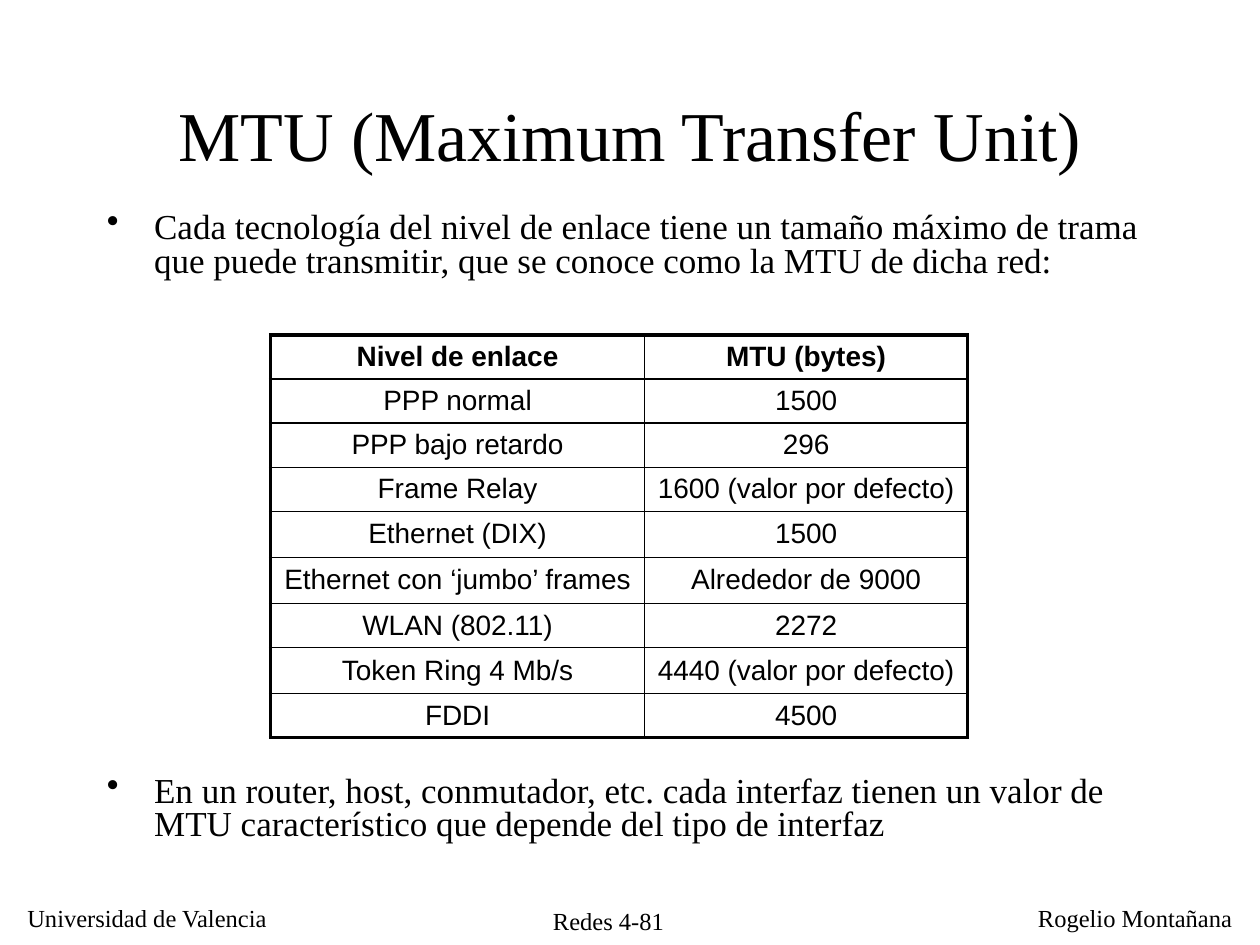
from pptx import Presentation
from pptx.dml.color import RGBColor
from pptx.enum.text import MSO_ANCHOR, PP_ALIGN
from pptx.oxml import parse_xml
from pptx.oxml.ns import nsdecls
from pptx.util import Pt

BLACK = RGBColor(0, 0, 0)
SERIF, SANS = "Times New Roman", "Arial"
LEFT, MID = PP_ALIGN.LEFT, PP_ALIGN.CENTER


def put_text(frame, text, size, font=SERIF, align=LEFT, bold=False):
    par = frame.paragraphs[0]
    par.alignment = align
    run = par.add_run()
    run.text = text
    look = {"size": Pt(size), "name": font, "bold": bold}
    for key, value in look.items():
        setattr(run.font, key, value)
    run.font.color.rgb = BLACK
    return par


def add_edge(cell, side, width):
    cell._tc.get_or_add_tcPr().append(parse_xml(
        f'<a:{side} {nsdecls("a")} w="{Pt(width)}"><a:solidFill>'
        f'<a:srgbClr val="{BLACK}"/></a:solidFill></a:{side}>'))


prs = Presentation()
prs.slide_width, prs.slide_height = Pt(720), Pt(540)
slide = prs.slides.add_slide(prs.slide_layouts[6])
shapes = slide.shapes

# Title and footer: text, box, size, alignment, anchor, wrap
labels = [
    ("MTU (Maximum Transfer Unit)", (54, 31.5, 612, 90), 40, MID, MSO_ANCHOR.MIDDLE, True),
    ("Universidad de Valencia", (8.5, 512.5, 153.5, 24), 14, LEFT, MSO_ANCHOR.TOP, False),
    ("Redes 4-81", (301, 514, 93.5, 21.5), 14, MID, MSO_ANCHOR.TOP, True),
    ("Rogelio Montañana", (586, 512.5, 125.5, 24), 14, LEFT, MSO_ANCHOR.TOP, False),
]
for text, box, size, align, anchor, wrap in labels:
    frame = shapes.add_textbox(*map(Pt, box)).text_frame
    frame.word_wrap = wrap
    frame.vertical_anchor = anchor
    put_text(frame, text, size, align=align)

# Bulleted statements above and below the table
points = [
    (118, "Cada tecnología del nivel de enlace tiene un tamaño máximo de trama "
          "que puede transmitir, que se conoce como la MTU de dicha red:"),
    (440, "En un router, host, conmutador, etc. cada interfaz tienen un valor de "
          "MTU característico que depende del tipo de interfaz"),
]
for top, text in points:
    frame = shapes.add_textbox(Pt(54), Pt(top), Pt(612), Pt(67.5)).text_frame
    frame.word_wrap = True
    par = put_text(frame, text, 20)
    par.line_spacing = 0.8
    par.space_before = Pt(4)
    props = par._p.get_or_add_pPr()
    props.set("marL", str(Pt(27)))
    props.set("indent", str(Pt(-27)))
    props.append(parse_xml(f'<a:buChar {nsdecls("a")} char="•"/>'))

# MTU table: link level, MTU, row height
rows = [
    ("Nivel de enlace", "MTU (bytes)", 25),
    ("PPP normal", "1500", 25),
    ("PPP bajo retardo", "296", 25),
    ("Frame Relay", "1600 (valor por defecto)", 25),
    ("Ethernet (DIX)", "1500", 26.3),
    ("Ethernet con ‘jumbo’ frames", "Alrededor de 9000", 26.3),
    ("WLAN (802.11)", "2272", 25),
    ("Token Ring 4 Mb/s", "4440 (valor por defecto)", 26.3),
    ("FDDI", "4500", 25),
]
widths = (213.8, 184.5)
total = sum(row[-1] for row in rows)
table = shapes.add_table(len(rows), len(widths), Pt(154.6), Pt(191.5),
                         Pt(sum(widths)), Pt(total)).table
table.first_row = table.horz_banding = False
for col, width in zip(table.columns, widths):
    col.width = Pt(width)

THICK, THIN = 2.25, 1
last = len(rows) - 1
for r, (*texts, height) in enumerate(rows):
    table.rows[r].height = Pt(height)
    for c, text in enumerate(texts):
        cell = table.cell(r, c)
        cell.margin_top = cell.margin_bottom = Pt(3)
        cell.vertical_anchor = MSO_ANCHOR.MIDDLE
        put_text(cell.text_frame, text, 16, SANS, MID, r == 0)
        outer = {"lnL": c == 0, "lnR": c == 1, "lnT": r == 0, "lnB": r == last}
        for side, edge in outer.items():
            add_edge(cell, side, THICK if edge else THIN)
        cell.fill.background()

prs.save("out.pptx")
